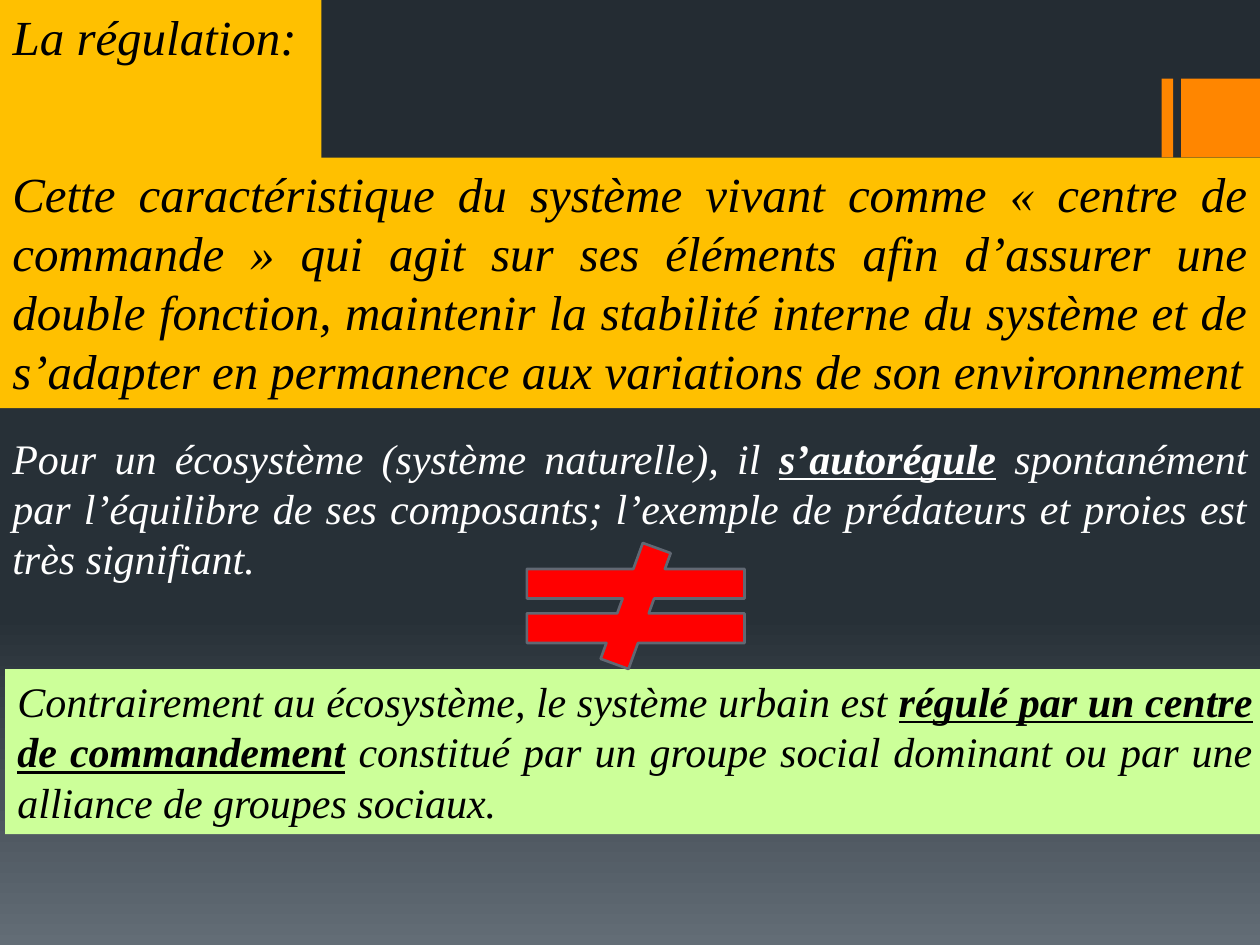
from dataclasses import dataclass

from lxml.etree import SubElement
from pptx import Presentation
from pptx.dml.color import RGBColor
from pptx.enum.shapes import MSO_SHAPE as Shape
from pptx.enum.text import MSO_ANCHOR as Anchor, MSO_AUTO_SIZE as AutoSize, PP_ALIGN as Align
from pptx.oxml.ns import qn
from pptx.util import Inches, Pt

WIDTH, HEIGHT = 10, 7.5


@dataclass(frozen=True)
class Theme:
    font: str = "Times New Roman"
    large: int = 28
    medium: int = 24
    dark: str = "000000"
    light: str = "FFFFFF"
    amber: str = "FFC000"
    green: str = "CCFF99"
    orange: str = "FF8600"
    red: str = "FF0000"
    outline: str = "616873"
    background: tuple = ((0, "242C33"), (65, "273037"), (100, "636D76"))


THEME = Theme()


def color(value):
    return RGBColor.from_string(value)


def place(shape, left, top, width, height):
    shape.left, shape.top = Inches(left), Inches(top)
    shape.width, shape.height = Inches(width), Inches(height)


def paint_background(slide):
    """Fill the slide with the theme's gradient, from top to bottom."""
    fill = slide.background.fill
    fill.gradient()
    fill.gradient_angle = 270
    stops = slide.background._cSld.find(".//" + qn("a:gsLst"))
    for stop in list(stops):
        stops.remove(stop)
    for percent, value in THEME.background:
        stop = SubElement(stops, qn("a:gs"), pos=str(percent * 1000))
        SubElement(stop, qn("a:srgbClr"), val=value)


def add_block(slide, kind, box, fill, line=None):
    shape = slide.shapes.add_shape(kind, *map(Inches, box))
    shape.shadow.inherit = False
    shape.fill.solid()
    shape.fill.fore_color.rgb = color(fill)
    if line:
        shape.line.color.rgb = color(line)
        shape.line.width = Pt(1.5)
    else:
        shape.line.fill.background()


def write(shape, *runs, size, ink=THEME.dark, align=Align.JUSTIFY, wrap=True):
    """Write runs into a shape; every second run is bold and underlined."""
    frame = shape.text_frame
    frame.word_wrap = wrap
    frame.auto_size = AutoSize.SHAPE_TO_FIT_TEXT
    frame.vertical_anchor = Anchor.TOP
    paragraph = frame.paragraphs[0]
    paragraph.alignment = align
    for index, text in enumerate(runs):
        run = paragraph.add_run()
        run.text = text
        font = run.font
        font.name, font.size, font.italic = THEME.font, Pt(size), True
        font.color.rgb = color(ink)
        font.bold = font.underline = index % 2 == 1


def add_title(slide, text, box):
    title = slide.shapes.title
    place(title, *box)
    title.fill.solid()
    title.fill.fore_color.rgb = color(THEME.amber)
    write(title, text, size=THEME.large, align=Align.LEFT, wrap=False)


def add_text(slide, box, *runs, fill=None, **text_format):
    shape = slide.shapes.add_textbox(*map(Inches, box))
    if fill:
        shape.fill.solid()
        shape.fill.fore_color.rgb = color(fill)
    write(shape, *runs, **text_format)


def main():
    presentation = Presentation()
    presentation.slide_width, presentation.slide_height = Inches(WIDTH), Inches(HEIGHT)
    slide = presentation.slides.add_slide(presentation.slide_layouts[5])
    paint_background(slide)

    unit = HEIGHT / 12
    for left, width in ((9.22, 0.09), (WIDTH - unit, unit)):
        add_block(slide, Shape.RECTANGLE, (left, unit, width, unit), THEME.orange)

    add_title(slide, "La régulation:", (0, 0, 2.55, 0.57))
    add_text(
        slide, (0, 2 * unit, WIDTH, 1.99),
        "Cette caractéristique du système vivant comme « centre de commande » qui agit "
        "sur ses éléments afin d’assurer une double fonction, maintenir la stabilité "
        "interne du système et de s’adapter en permanence aux variations de son "
        "environnement",
        size=THEME.large, fill=THEME.amber,
    )
    add_text(
        slide, (0, 3.38, WIDTH, 1.31),
        "Pour un écosystème (système naturelle), il ",
        "s’autorégule",
        " spontanément par l’équilibre de ses composants; l’exemple de prédateurs et "
        "proies est très signifiant.",
        size=THEME.medium, ink=THEME.light,
    )
    add_text(
        slide, (0.04, 5.31, WIDTH, 1.31),
        "Contrairement au écosystème, le système urbain est ",
        "régulé par un centre de commandement",
        " constitué par un groupe social dominant ou par une alliance de groupes sociaux.",
        size=THEME.medium, fill=THEME.green,
    )
    add_block(slide, Shape.MATH_NOT_EQUAL, (3.87, 4.31, 2.35, 1), THEME.red, THEME.outline)
    presentation.save("out.pptx")


if __name__ == "__main__":
    main()
